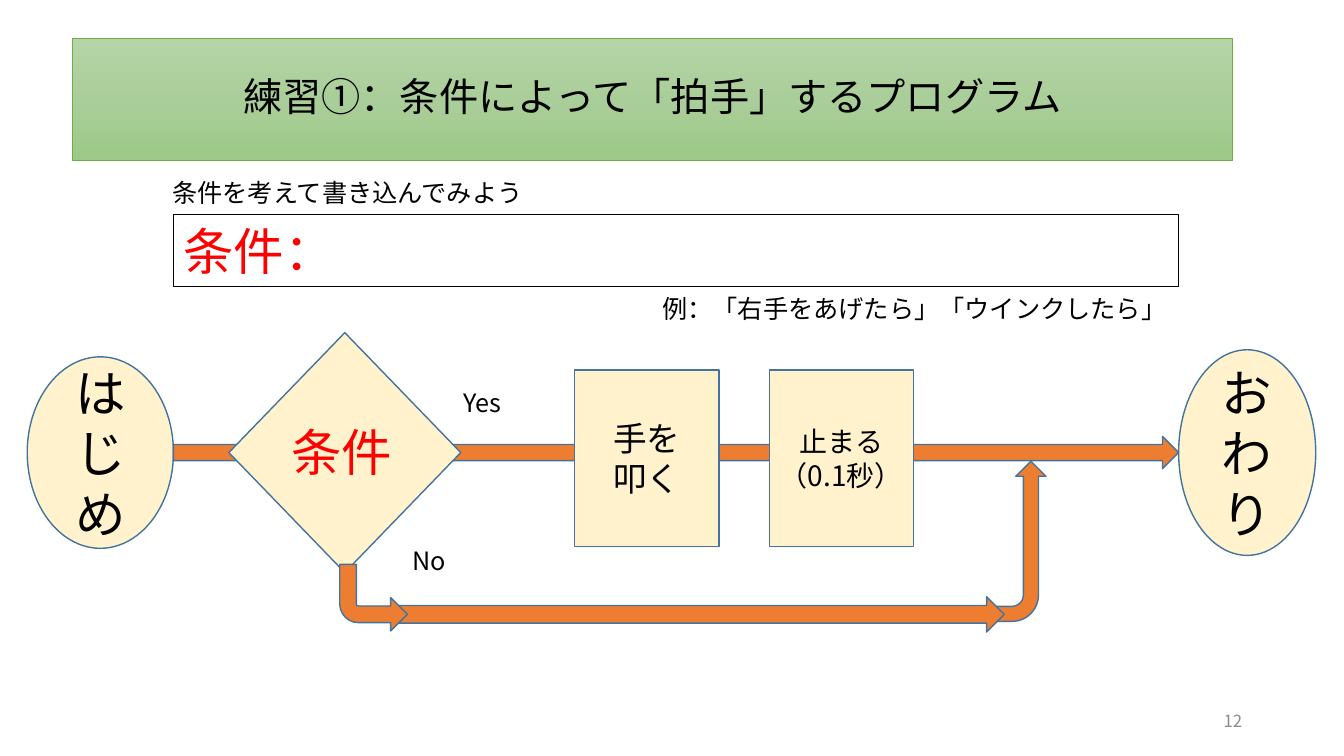
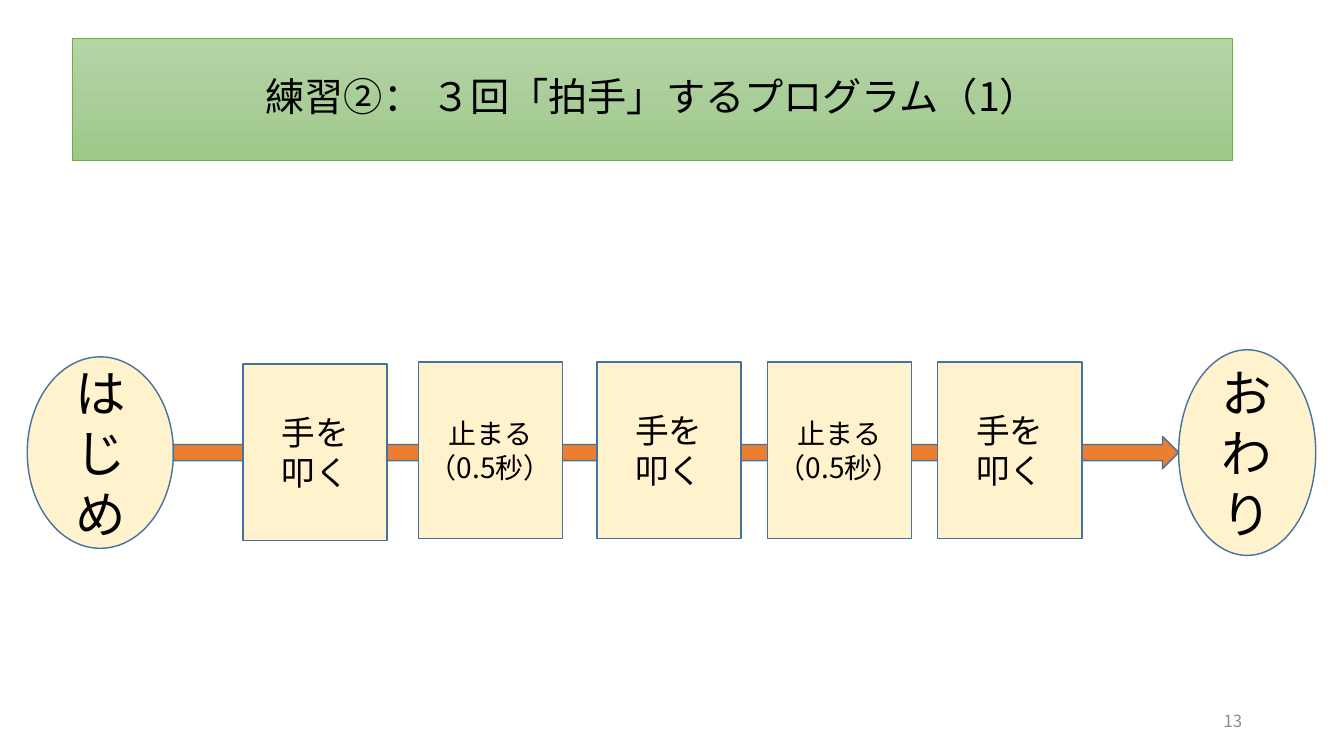
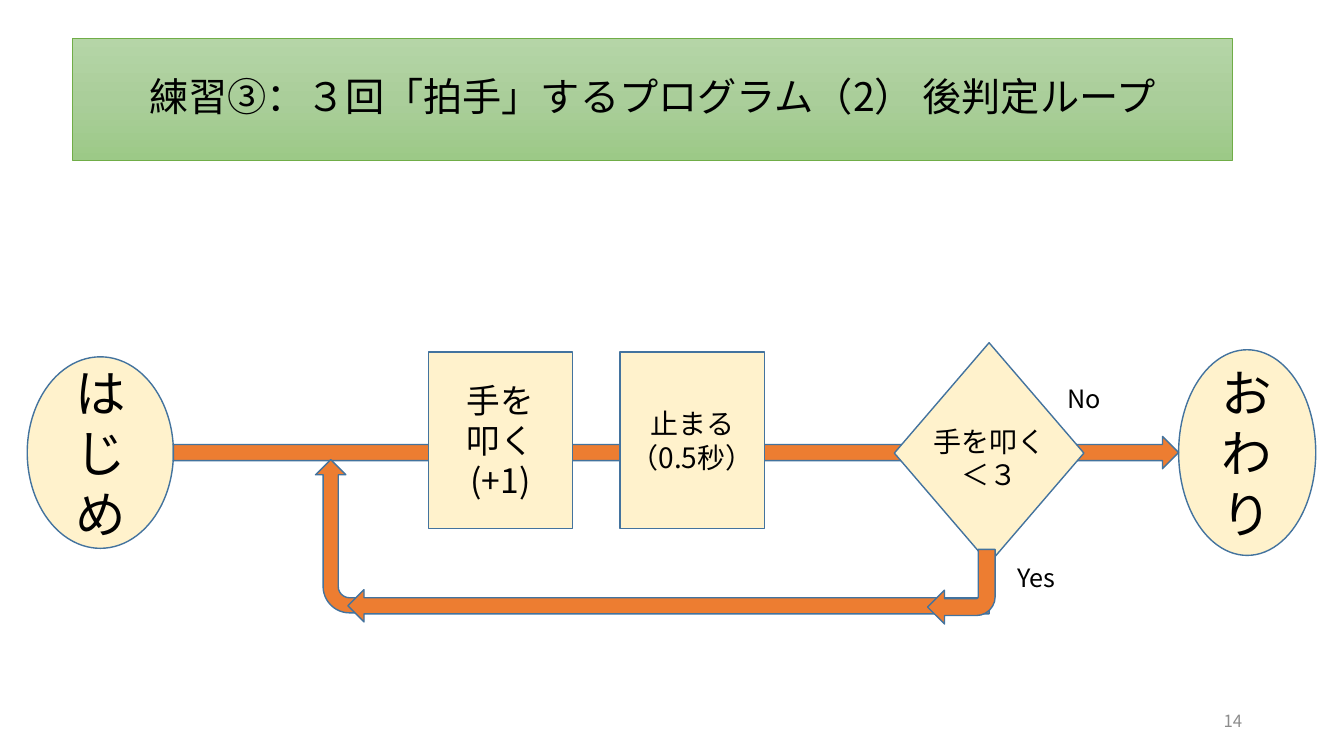
from copy import deepcopy
from typing import NamedTuple

from lxml import etree
from pptx import Presentation
from pptx.dml.color import RGBColor
from pptx.enum import shapes, text
from pptx.oxml.ns import qn
from pptx.util import Inches, Pt

FONT = "Noto Sans CJK JP"
COLORS = {
    "ink": "000000", "red": "FF0000", "number": "8C8C8C", "white": "FFFFFF",
    "cream": "FFF2CC", "edge": "43739E", "arrow": "ED7D31", "band_edge": "70AD47",
    "band_top": "B5D5A7", "band_middle": "AACE9A", "band_bottom": "9CC987",
}
BAND_STOPS = [(0, "band_top"), (0.5, "band_middle"), (1, "band_bottom")]
KIND = shapes.MSO_SHAPE
ALIGN = text.PP_ALIGN
ANCHOR = text.MSO_ANCHOR


class Box(NamedTuple):
    left: float
    top: float
    width: float
    height: float

    def inset(self, dx, dy, width, height):
        return Box(self.left + dx, self.top + dy, width, height)

    def inches(self):
        return [Inches(round(value, 2)) for value in self]


BAND = Box(0.72, 0.38, 11.5, 1.21)
NUMBER = Box(9.42, 6.95, 3, 0.4)
CONDITION = Box(1.61, 1.71, 10.11, 1.55)
TRACK = Box(1.72, 4.33, 9.97, 0.32)


def color(name):
    return RGBColor.from_string(COLORS[name])


# Basic parts
def write(shape, lines, size, ink="ink", align=ALIGN.CENTER, anchor=ANCHOR.MIDDLE, wrap=True):
    frame = shape.text_frame
    frame.word_wrap = wrap
    frame.vertical_anchor = anchor
    frame.text = lines
    for para in frame.paragraphs:
        para.alignment = align
        for span in para.runs:
            span.font.size = Pt(size)
            span.font.color.rgb = color(ink)
            span.font.name = FONT
    for properties in shape.element.iter(qn("a:rPr")):
        etree.SubElement(properties, qn("a:ea")).set("typeface", FONT)


def add_figure(page, kind, box, fill="cream", edge="edge", width=1):
    shape = page.shapes.add_shape(kind, *box.inches())
    shape.shadow.inherit = False
    shape.fill.solid()
    shape.fill.fore_color.rgb = color(fill)
    shape.line.color.rgb = color(edge)
    shape.line.width = Pt(width)
    return shape


def add_label(page, box, lines, size=18, ink="ink", align=ALIGN.LEFT,
              anchor=ANCHOR.TOP, wrap=True):
    label = page.shapes.add_textbox(*box.inches())
    write(label, lines, size, ink, align, anchor, wrap)


def add_arrow(page, kind, box, rotation=0, flip=None, bend=None):
    arrow = add_figure(page, kind, box, "arrow")
    arrow.rotation = rotation
    if flip:
        arrow.element.spPr.find(qn("a:xfrm")).set(flip, "1")
    if bend:
        arrow.adjustments[3] = bend


# Title band with its three-colour gradient
def add_band(page, box, title):
    band = add_figure(page, KIND.RECTANGLE, box, edge="band_edge", width=0.5)
    band.fill.gradient()
    band.fill.gradient_angle = 270
    stop_list = band.element.spPr.find(qn("a:gradFill")).find(qn("a:gsLst"))
    stop_list.insert(1, deepcopy(stop_list[0]))
    for stop, (position, shade) in zip(band.fill.gradient_stops, BAND_STOPS):
        stop.position = position
        stop.color.rgb = color(shade)
    write(band, title, 28)
    band.text_frame.paragraphs[0].line_spacing = 0.9


# Start and end ovals, centred on the main arrow
def add_track(page, track):
    middle = track.height / 2
    ovals = [("はじめ", -1.45, 1.45, 1.9), ("おわり", track.width, 1.36, 2.04)]
    for word, dx, width, height in ovals:
        oval = add_figure(page, KIND.OVAL, track.inset(dx, middle - height / 2, width, height))
        write(oval, word, 36)
    add_arrow(page, KIND.RIGHT_ARROW, track)


def add_step(page, track, dx, dy, lines, size):
    step = add_figure(page, KIND.FLOWCHART_PROCESS, track.inset(dx, dy, 1.43, 1.75))
    write(step, lines, size)


def add_clap(page, track, dx, dy, extra=""):
    add_step(page, track, dx, dy, "手を\n叩く" + extra, 24)


def add_pause(page, track, dx, dy, seconds):
    add_step(page, track, dx, dy, f"止まる\n（{seconds}秒）", 20)


# Place to write the condition
def add_condition(page, box):
    field = add_figure(page, KIND.RECTANGLE, box.inset(0.11, 0.42, 9.97, 0.71), "white", "ink")
    write(field, "条件：", 36, "red", ALIGN.LEFT, ANCHOR.TOP)
    add_label(page, box.inset(4.86, 1.15, 5.25, 0.4),
              "例：「右手をあげたら」「ウインクしたら」", wrap=False)
    add_label(page, box.inset(0, 0, 3.74, 0.4), "条件を考えて書き込んでみよう", wrap=False)


# Flow charts along the main arrow
def branch_flow(page, track):
    add_clap(page, track, 3.98, -0.66)
    add_pause(page, track, 5.91, -0.66, "0.1")
    add_figure(page, KIND.DIAMOND, track.inset(0.55, -1.03, 2.3, 2.38))
    add_label(page, track.inset(1.07, -0.2, 1.61, 0.71), "条件", 36, "red")
    add_label(page, track.inset(2.78, -0.54, 0.69, 0.4), "Yes")
    add_label(page, track.inset(2.27, 1.03, 0.69, 0.4), "No")
    add_arrow(page, KIND.BENT_ARROW, track.inset(7.56, 0.74, 1.59, 0.6), 90, "flipH")
    add_arrow(page, KIND.RIGHT_ARROW, track.inset(2.22, 1.59, 6.02, 0.35))
    add_arrow(page, KIND.BENT_ARROW, track.inset(1.65, 1.27, 0.67, 0.66), flip="flipV", bend=0.28)
    add_condition(page, CONDITION)


def sequence_flow(page, track):
    for dx, dy in [(0.69, -0.72), (4.2, -0.74), (7.58, -0.74)]:
        add_clap(page, track, dx, dy)
    for dx in (2.43, 5.89):
        add_pause(page, track, dx, -0.74, "0.5")


def loop_flow(page, track):
    add_clap(page, track, 2.53, -0.84, "\n(+1)")
    add_pause(page, track, 4.43, -0.84, "0.5")
    add_arrow(page, KIND.BENT_ARROW, track.inset(0.95, 0.69, 1.52, 0.6), 270)
    add_figure(page, KIND.DIAMOND, track.inset(7.15, -0.93, 1.88, 2.19))
    add_label(page, track.inset(7.29, -0.17, 1.61, 0.77), "手を叩く\n＜３", 20, align=ALIGN.CENTER)
    add_arrow(page, KIND.RIGHT_ARROW, track.inset(1.73, 1.52, 6.36, 0.32), 180)
    add_arrow(page, KIND.BENT_ARROW, track.inset(7.48, 1.12, 0.67, 0.74), 180, bend=0.28)
    add_label(page, track.inset(8.77, -0.58, 0.69, 0.4), "No")
    add_label(page, track.inset(8.27, 1.2, 0.69, 0.4), "Yes")


EXERCISES = [
    ("練習①：条件によって「拍手」するプログラム", branch_flow),
    ("練習②： ３回「拍手」するプログラム（1）", sequence_flow),
    ("練習③：３回「拍手」するプログラム（2） 後判定ループ", loop_flow),
]


def main():
    deck = Presentation()
    deck.slide_width, deck.slide_height = Inches(13.33), Inches(7.5)
    for number, (title, draw_flow) in enumerate(EXERCISES, 12):
        page = deck.slides.add_slide(deck.slide_layouts[6])
        add_label(page, NUMBER, str(number), 12, "number", ALIGN.RIGHT, ANCHOR.MIDDLE)
        add_band(page, BAND, title)
        add_track(page, TRACK)
        draw_flow(page, TRACK)
    deck.save("out.pptx")


if __name__ == "__main__":
    main()
